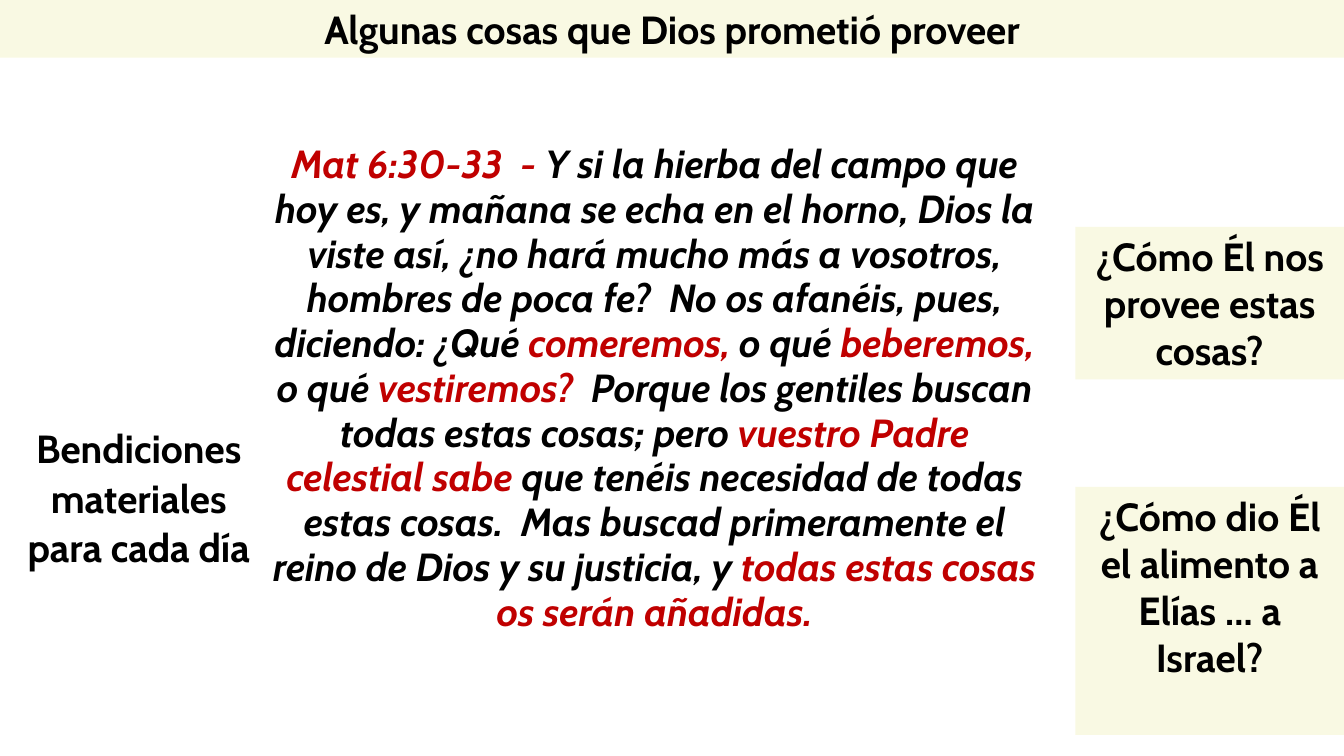
"""Build a slide on the things God promised to provide."""
import pptx
import pptx.dml.color
import pptx.enum.shapes
import pptx.enum.text
import pptx.util
from pptx.util import Cm

BLACK, RED, CREAM = "000000", "C00000", "F9F9E3"
SLIDE_WIDTH, SLIDE_HEIGHT = Cm(33.87), Cm(19.05)

HEADING = "Algunas cosas que Dios prometió proveer"
BLESSINGS = "Bendiciones materiales para cada día"
VERSE = [
    ("Mat 6:30-33  - ", RED),
    ("Y si la hierba del campo que hoy es, y mañana se echa en el horno, "
     "Dios la viste así, ¿no hará mucho más a vosotros, hombres de poca fe?  "
     "No os afanéis, pues, diciendo: ¿Qué ", BLACK),
    ("comeremos, ", RED),
    ("o qué ", BLACK),
    ("beberemos, ", RED),
    ("o qué ", BLACK),
    ("vestiremos? ", RED),
    (" Porque los gentiles buscan todas estas cosas; pero ", BLACK),
    ("vuestro Padre celestial sabe ", RED),
    ("que tenéis necesidad de todas estas cosas.  "
     "Mas buscad primeramente el reino de Dios y su justicia, y ", BLACK),
    ("todas estas cosas os serán añadidas.", RED),
]
QUESTIONS = [
    ("¿Cómo Él nos provee estas cosas?", 5.72, 3.84),
    ("¿Cómo dio Él el alimento a Elías … a Israel?", 12.27, 6.25),
]
QUESTION_WIDTH = Cm(6.77)


def rgb(code):
    return pptx.dml.color.RGBColor.from_string(code)


def paint(panel, color=CREAM):
    panel.fill.solid()
    panel.fill.fore_color.rgb = rgb(color)
    panel.line.fill.background()


def write(holder, text, italic=False, spacing=1.0):
    frame = holder.text_frame
    frame.word_wrap = True
    frame.auto_size = pptx.enum.text.MSO_AUTO_SIZE.NONE
    frame.vertical_anchor = pptx.enum.text.MSO_ANCHOR.TOP
    paragraph = frame.paragraphs[0]
    paragraph.alignment = pptx.enum.text.PP_ALIGN.CENTER
    paragraph.line_spacing = spacing
    for words, color in [(text, BLACK)] if isinstance(text, str) else text:
        run = paragraph.add_run()
        run.text = words
        run.font.name = "Cabin"
        run.font.size = pptx.util.Pt(28)
        run.font.bold = True
        run.font.italic = italic
        run.font.color.rgb = rgb(color)


deck = pptx.Presentation()
deck.slide_width, deck.slide_height = SLIDE_WIDTH, SLIDE_HEIGHT
slide = deck.slides.add_slide(deck.slide_layouts[5])

heading = slide.shapes.title
heading.left, heading.top = Cm(0), Cm(0)
heading.width, heading.height = SLIDE_WIDTH, Cm(1.45)
paint(heading)
write(heading, HEADING)

blessings = slide.shapes.add_textbox(Cm(0), Cm(10.52), Cm(6.99), Cm(5.18))
write(blessings, BLESSINGS, spacing=1.05)

verse = slide.shapes.add_textbox(Cm(6.55), Cm(3.48), Cm(19.89), Cm(15.04))
write(verse, VERSE, italic=True, spacing=0.95)

for wording, top, height in QUESTIONS:
    question = slide.shapes.add_shape(
        pptx.enum.shapes.MSO_SHAPE.RECTANGLE,
        SLIDE_WIDTH - QUESTION_WIDTH, Cm(top), QUESTION_WIDTH, Cm(height))
    question.shadow.inherit = False
    paint(question)
    write(question, wording)

deck.save("out.pptx")
